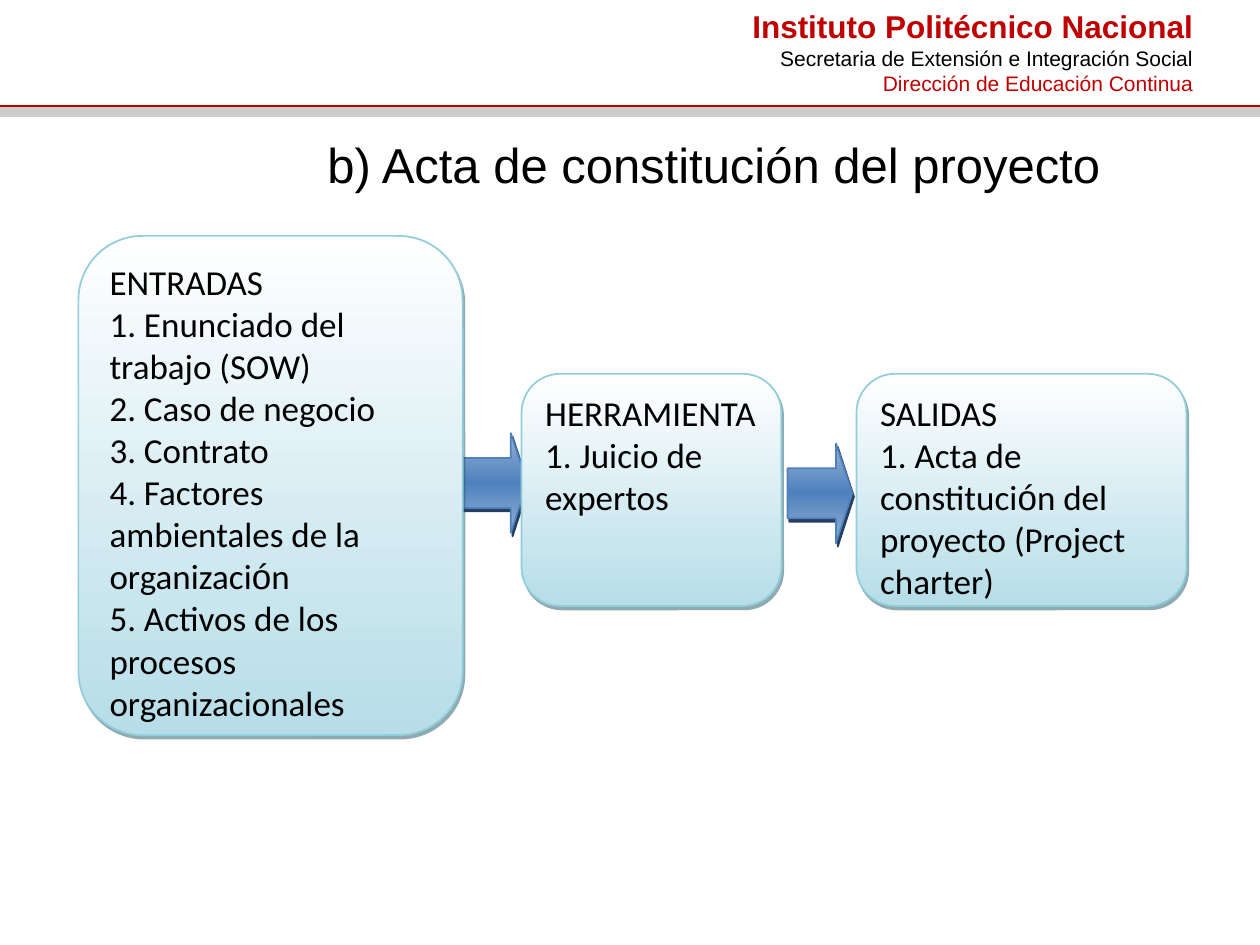
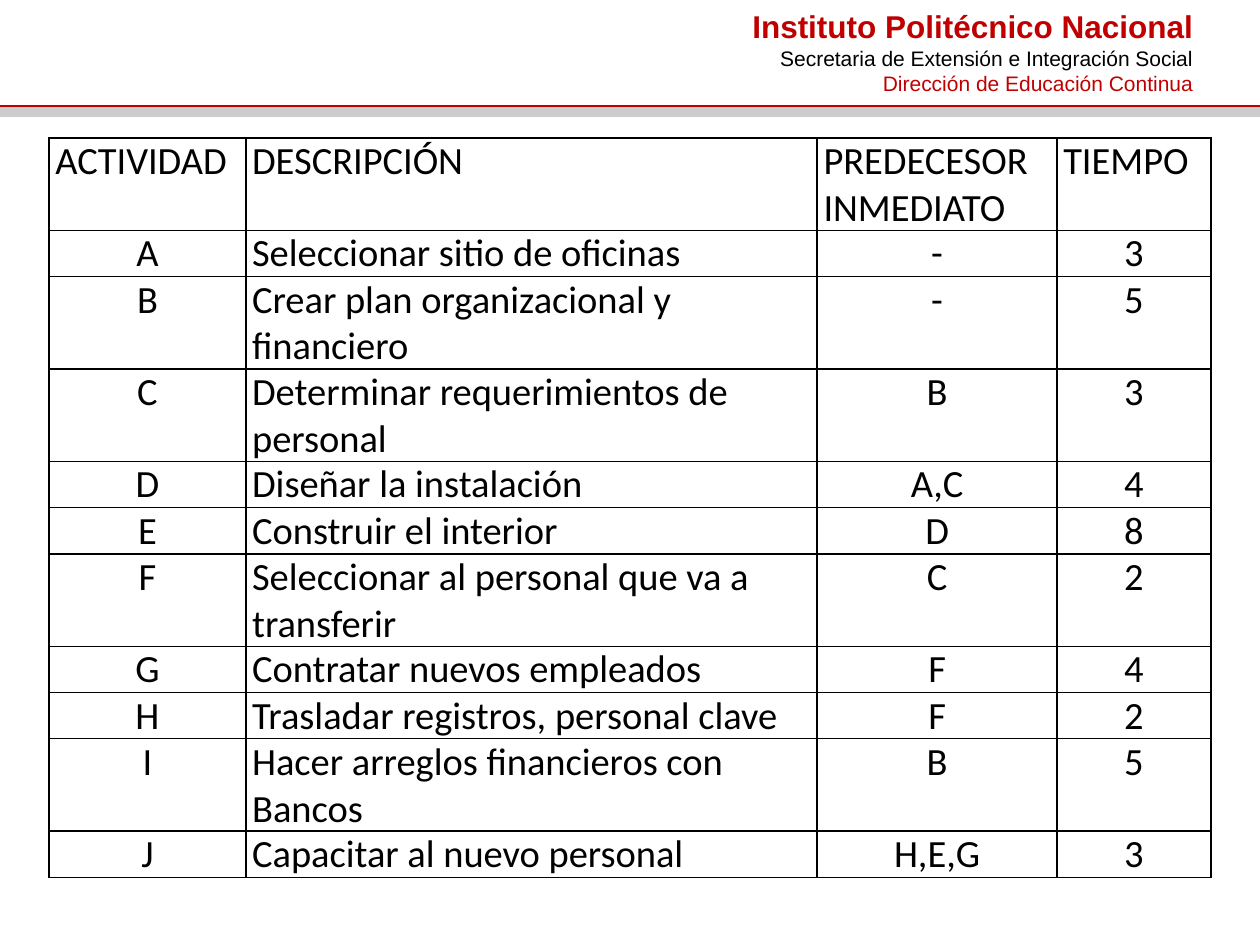
"""Build two project management slides: a process flow and an activity table."""
from dataclasses import dataclass

from lxml.etree import SubElement
from pptx import Presentation
from pptx.dml.color import RGBColor
from pptx.enum.shapes import MSO_CONNECTOR, MSO_SHAPE
from pptx.enum.text import MSO_ANCHOR, MSO_AUTO_SIZE, PP_ALIGN
from pptx.oxml.ns import qn
from pptx.util import Pt


@dataclass(frozen=True)
class Theme:
    heading_font: str = "Arial"
    body_font: str = "Calibri"
    black: str = "000000"
    red: str = "C00000"
    band: str = "CCCCCC"
    box_stops: tuple = ((0, "FFFFFF"), (100, "B6DDE8"))
    box_line: str = "92CDDC"
    box_shadow: str = "205867"
    arrow_stops: tuple = ((0, "95B3D7"), (50, "4F81BD"), (100, "95B3D7"))
    arrow_line: str = "4F81BD"
    arrow_shadow: str = "243F60"
    institution_size: int = 18
    department_size: int = 12
    title_size: int = 28
    box_size: int = 20
    table_size: int = 22


def set_font(font, name, size, color, bold=False):
    font.name = name
    font.size = Pt(size)
    font.color.rgb = RGBColor.from_string(color)
    font.bold = bold


def style_block(block, stops, line_color, shadow_color, shadow_opacity):
    block.fill.gradient()
    block.fill.gradient_angle = 270
    properties = block._element.spPr
    stop_list = properties.find(qn("a:gradFill")).find(qn("a:gsLst"))
    for stop in list(stop_list):
        stop_list.remove(stop)
    for position, color in stops:
        stop = SubElement(stop_list, qn("a:gs"), pos=str(position * 1000))
        SubElement(stop, qn("a:srgbClr"), val=color)
    block.line.color.rgb = RGBColor.from_string(line_color)
    block.line.width = Pt(1)
    block.shadow.inherit = False
    shadow = SubElement(properties.find(qn("a:effectLst")), qn("a:outerShdw"),
                        blurRad="0", dist=str(Pt(2.2)), dir=str(63 * 60000),
                        algn="ctr", rotWithShape="0")
    color = SubElement(shadow, qn("a:srgbClr"), val=shadow_color)
    SubElement(color, qn("a:alpha"), val=str(shadow_opacity * 1000))


theme = Theme()
presentation = Presentation()
presentation.slide_width = Pt(720)
presentation.slide_height = Pt(540)

header_lines = [
    ("Instituto Politécnico Nacional", theme.institution_size, theme.red, True),
    ("Secretaria de Extensión e Integración Social", theme.department_size, theme.black, False),
    ("Dirección de Educación Continua", theme.department_size, theme.red, False),
]
for _ in range(2):
    slide = presentation.slides.add_slide(presentation.slide_layouts[6])
    header = slide.shapes.add_textbox(Pt(286.5), Pt(0.7), Pt(402.5), Pt(58.3))
    header.text_frame.word_wrap = True
    header.text_frame.auto_size = MSO_AUTO_SIZE.SHAPE_TO_FIT_TEXT
    paragraph = header.text_frame.paragraphs[0]
    paragraph.alignment = PP_ALIGN.RIGHT
    for index, (text, size, color, bold) in enumerate(header_lines):
        if index:
            paragraph.add_line_break()
        run = paragraph.add_run()
        run.text = text
        set_font(run.font, theme.heading_font, size, color, bold)

    rule = slide.shapes.add_connector(MSO_CONNECTOR.STRAIGHT, Pt(0), Pt(60.5), Pt(720), Pt(60.5))
    rule.line.color.rgb = RGBColor.from_string(theme.red)
    rule.line.width = Pt(0.75)
    SubElement(rule._element.spPr, qn("a:effectLst"))

    band = slide.shapes.add_shape(MSO_SHAPE.RECTANGLE, Pt(0), Pt(61.2), Pt(720), Pt(5.6))
    band.fill.solid()
    band.fill.fore_color.rgb = RGBColor.from_string(theme.band)
    band.line.fill.background()
    band.shadow.inherit = False

flow_slide, table_slide = presentation.slides

for left, top in [(264.2, 247.5), (450, 253.4)]:
    arrow = flow_slide.shapes.add_shape(MSO_SHAPE.RIGHT_ARROW, Pt(left), Pt(top), Pt(37), Pt(57))
    arrow.adjustments[0] = 0.5
    arrow.adjustments[1] = 0.25
    style_block(arrow, theme.arrow_stops, theme.arrow_line, theme.arrow_shadow, 100)

flow_boxes = [
    (44.8, 134.8, 219.6, 285.3, [
        "ENTRADAS",
        "1. Enunciado del trabajo (SOW)",
        "2. Caso de negocio",
        "3. Contrato",
        "4. Factores ambientales de la organización",
        "5. Activos de los procesos organizacionales",
    ]),
    (298, 213.6, 148.5, 132.7, ["HERRAMIENTA", "1. Juicio de expertos"]),
    (489.4, 213.6, 188.6, 132.7, [
        "SALIDAS",
        "1. Acta de constitución del proyecto (Project charter)",
    ]),
]
for left, top, width, height, lines in flow_boxes:
    box = flow_slide.shapes.add_shape(MSO_SHAPE.FLOWCHART_ALTERNATE_PROCESS,
                                      Pt(left), Pt(top), Pt(width), Pt(height))
    style_block(box, theme.box_stops, theme.box_line, theme.box_shadow, 50)
    frame = box.text_frame
    frame.word_wrap = True
    frame.vertical_anchor = MSO_ANCHOR.TOP
    for index, line in enumerate(lines):
        paragraph = frame.add_paragraph() if index else frame.paragraphs[0]
        paragraph.alignment = PP_ALIGN.LEFT
        set_font(paragraph.font, theme.body_font, theme.box_size, theme.black)
        for piece in filter(None, line.partition("ó")):
            run = paragraph.add_run()
            run.text = piece
            if piece == "ó":
                run.font.name = theme.heading_font

title = flow_slide.shapes.add_textbox(Pt(180), Pt(73.4), Pt(461.5), Pt(41))
title.text_frame.word_wrap = False
title.text_frame.auto_size = MSO_AUTO_SIZE.SHAPE_TO_FIT_TEXT
paragraph = title.text_frame.paragraphs[0]
paragraph.text = "b) Acta de constitución del proyecto"
set_font(paragraph.font, theme.heading_font, theme.title_size, theme.black)

activities = [
    ("ACTIVIDAD", "DESCRIPCIÓN", "PREDECESOR INMEDIATO", "TIEMPO"),
    ("A", "Seleccionar sitio de oficinas", "-", "3"),
    ("B", "Crear plan organizacional y financiero", "-", "5"),
    ("C", "Determinar requerimientos de personal", "B", "3"),
    ("D", "Diseñar la instalación", "A,C", "4"),
    ("E", "Construir el interior", "D", "8"),
    ("F", "Seleccionar al personal que va a transferir", "C", "2"),
    ("G", "Contratar nuevos empleados", "F", "4"),
    ("H", "Trasladar registros, personal clave", "F", "2"),
    ("I", "Hacer arreglos financieros con Bancos", "B", "5"),
    ("J", "Capacitar al nuevo personal", "H,E,G", "3"),
]
column_widths = [112.5, 326.5, 137, 88]
two_line_rows = {0, 2, 3, 6, 9}
line_height = 26.4
table_height = line_height * (len(activities) + len(two_line_rows))
table = table_slide.shapes.add_table(len(activities), len(column_widths), Pt(28), Pt(78.8),
                                     Pt(sum(column_widths)), Pt(table_height)).table
table.first_row = False
table.horz_banding = False
for column, width in zip(table.columns, column_widths):
    column.width = Pt(width)
for row_index, activity in enumerate(activities):
    table.rows[row_index].height = Pt(line_height * (2 if row_index in two_line_rows else 1))
    for column_index, text in enumerate(activity):
        cell = table.cell(row_index, column_index)
        cell.margin_left = cell.margin_right = Pt(3.6)
        cell.margin_top = cell.margin_bottom = Pt(0)
        paragraph = cell.text_frame.paragraphs[0]
        paragraph.text = text
        centred = row_index > 0 and column_index != 1
        paragraph.alignment = PP_ALIGN.CENTER if centred else PP_ALIGN.LEFT
        set_font(paragraph.font, theme.body_font, theme.table_size, theme.black)
        cell_properties = cell._tc.get_or_add_tcPr()
        for side in ("a:lnL", "a:lnR", "a:lnT", "a:lnB"):
            border = SubElement(cell_properties, qn(side), w=str(Pt(1)))
            SubElement(SubElement(border, qn("a:solidFill")), qn("a:srgbClr"), val=theme.black)
        cell.fill.background()

presentation.save("out.pptx")
